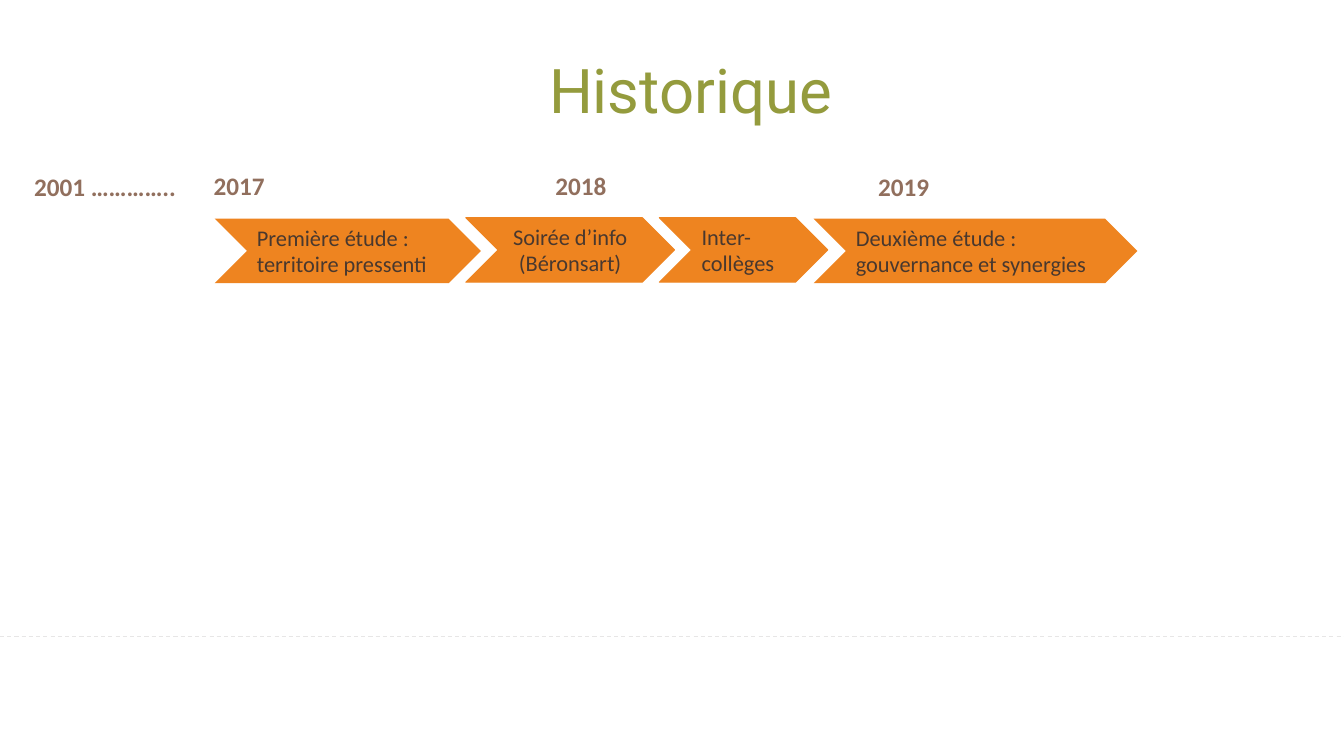
from lxml import etree
from pptx import Presentation
from pptx.dml.color import RGBColor
from pptx.enum.dml import MSO_LINE
from pptx.enum.shapes import MSO_CONNECTOR, MSO_SHAPE
from pptx.enum.text import MSO_ANCHOR, PP_ALIGN
from pptx.oxml.ns import qn
from pptx.util import Pt

PX = 9144
PAGE_WIDTH, PAGE_HEIGHT = 1333, 750
CHEVRON = MSO_SHAPE.CHEVRON
STRAIGHT = MSO_CONNECTOR.STRAIGHT
DASH = MSO_LINE.DASH
LEFT, CENTER = PP_ALIGN.LEFT, PP_ALIGN.CENTER
TOP, MIDDLE = MSO_ANCHOR.TOP, MSO_ANCHOR.MIDDLE

OLIVE, BROWN, DARK = "949B3D", "916F5D", "49382E"
ORANGE, GREY = "EE8420", "E7E6E6"

YEARS = [
    ("2001 …………..", 24, 165, 165),
    ("2017", 202, 164, 79),
    ("2018", 541, 164, 79),
    ("2019", 861, 165, 79),
]
STEPS = [
    ("Première étude : territoire pressenti", 213, 217, 264, LEFT, False),
    ("Deuxième étude : gouvernance et synergies", 807, 217, 321, LEFT, False),
    ("Inter-collèges", 654, 216, 167, LEFT, True),
    ("Soirée d’info (Béronsart)", 462, 216, 207, CENTER, True),
]


def color(value):
    return RGBColor.from_string(value)


def emu(*lengths):
    return [length * PX for length in lengths]


def write(shape, text, size, ink, font="Calibri", bold=False, align=LEFT, anchor=TOP):
    frame = shape.text_frame
    frame.word_wrap = True
    frame.vertical_anchor = anchor
    para = frame.paragraphs[0]
    para.alignment = align
    span = para.add_run()
    span.text = text
    span.font.name = font
    span.font.size = Pt(size)
    span.font.bold = bold
    span.font.color.rgb = color(ink)
    return para


def add_divider(page, left, top, width):
    line = page.shapes.add_connector(STRAIGHT, *emu(left, top, left + width, top))
    line.line.color.rgb = color(GREY)
    line.line.width = Pt(0.75)
    line.line.dash_style = DASH
    etree.SubElement(line._element.spPr, qn("a:effectLst"))


def add_title(page, left, top, width, height):
    box = page.shapes.add_textbox(*emu(left, top, width, height))
    para = write(box, "Historique", 44, OLIVE, "Roboto", align=CENTER, anchor=MIDDLE)
    para.line_spacing = 0.9


def add_year(page, text, left, top, width, height=40):
    box = page.shapes.add_textbox(*emu(left, top, width, height))
    write(box, text, 18, BROWN, bold=True)


def add_step(page, text, left, top, width, align, outlined, height=64):
    step = page.shapes.add_shape(CHEVRON, *emu(left, top, width, height))
    step.shadow.inherit = False
    step.fill.solid()
    step.fill.fore_color.rgb = color(ORANGE)
    if outlined:
        step.line.color.rgb = color(ORANGE)
        step.line.width = Pt(0.75)
    else:
        step.line.fill.background()
    write(step, text, 16, DARK, align=align)


def main():
    deck = Presentation()
    deck.slide_width, deck.slide_height = emu(PAGE_WIDTH, PAGE_HEIGHT)
    page = deck.slides.add_slide(deck.slide_layouts[6])
    add_divider(page, 0, 631, PAGE_WIDTH)
    add_title(page, 341, 30, 688, 125)
    for year in YEARS:
        add_year(page, *year)
    for step in STEPS:
        add_step(page, *step)
    deck.save("out.pptx")


if __name__ == "__main__":
    main()
